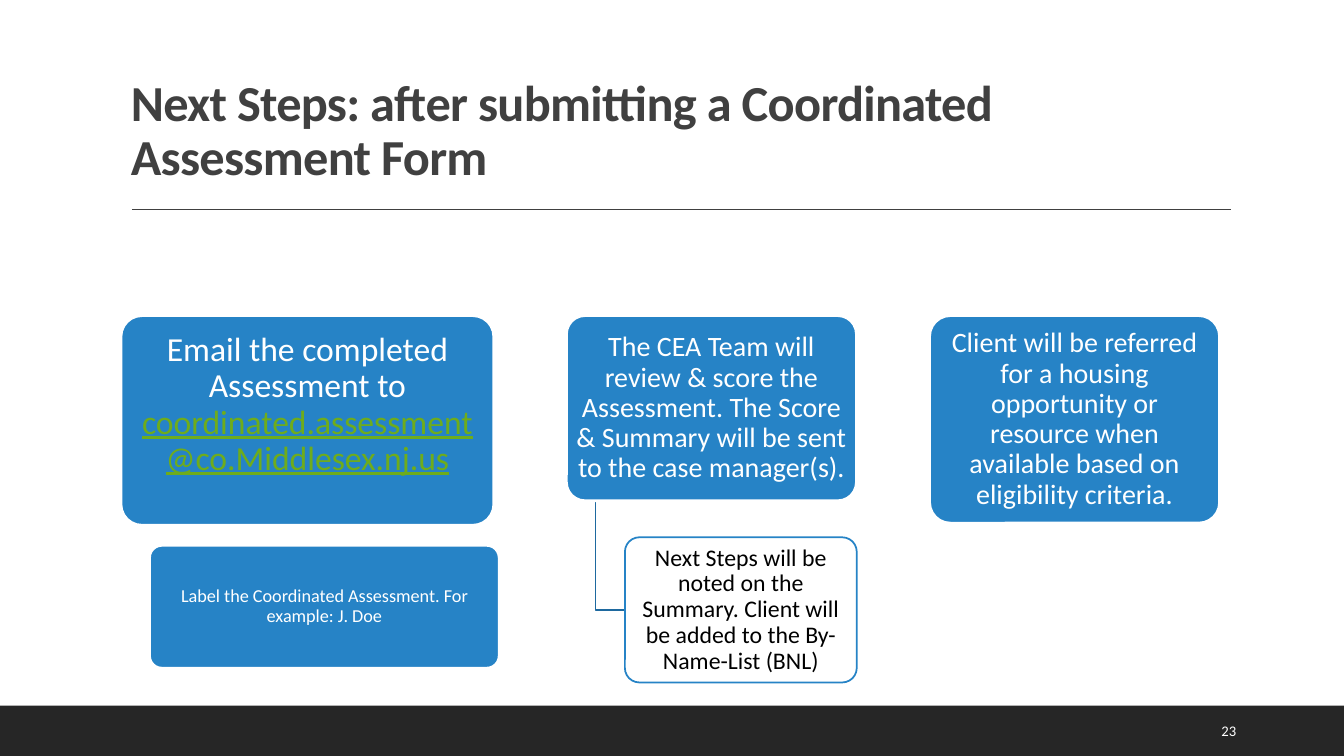
import dataclasses
import typing

import lxml.etree
import pptx
import pptx.dml.color
import pptx.enum.shapes
import pptx.enum.text
import pptx.oxml.ns
import pptx.util

Pt = pptx.util.Pt
ANCHOR = pptx.enum.text.MSO_ANCHOR
ALIGN = pptx.enum.text.PP_ALIGN
SHAPE = pptx.enum.shapes.MSO_SHAPE

BLUE, WHITE, GREY, GREEN = "2683C6", "FFFFFF", "404040", "6EAC1C"
TOP = 225.4  # shared top of the three step cards
SIDE = 2.5  # left and right inset of card text


@dataclasses.dataclass
class Card:
    text: str
    left: float
    top: float
    width: float
    height: float
    size: float
    fill: str = BLUE
    edge: str = WHITE
    weight: float = 2
    ink: str = WHITE
    mail: str = ""
    foot: float = 6  # bottom inset


EMAIL = Card("Email the completed Assessment to ", 86.4, TOP, 266.4, 149.8, 24,
             mail="coordinated.assessment@co.Middlesex.nj.us", foot=28)
REVIEW = Card("The CEA Team will review & score the Assessment. The Score & Summary "
              "will be sent to the case manager(s).", 404.6, TOP, 207.2, 132.3, 20)
REFER = Card("Client will be referred for a housing opportunity or resource when "
             "available based on eligibility criteria.", 664, TOP, 207.2, 148.3, 20)
NOTE = Card("Next Steps will be noted on the Summary. Client will be added to the "
            "By-Name-List (BNL)", 446.4, 383.8, 165.6, 103.7, 17,
            fill=WHITE, edge=BLUE, weight=1.25, ink="000000")
LABEL = Card("Label the Coordinated Assessment. For example: J. Doe",
             106.8, 389.5, 249.8, 87.8, 13)


def tint(code: str) -> pptx.dml.color.RGBColor:
    return pptx.dml.color.RGBColor.from_string(code)


def apply(target: typing.Any, values: dict[str, typing.Any]) -> None:
    for name, value in values.items():
        setattr(target, name, value)


def paint(shape: typing.Any, fill: str) -> None:
    shape.shadow.inherit = False
    shape.fill.solid()
    shape.fill.fore_color.rgb = tint(fill)


def edge(shape: typing.Any, code: str, weight: float) -> None:
    shape.line.color.rgb = tint(code)
    shape.line.width = Pt(weight)


def add_run(para: typing.Any, text: str, size: float, ink: str, **style: typing.Any) -> typing.Any:
    run = para.add_run()
    run.text = text
    apply(run.font, {"name": "Calibri", "size": Pt(size), **style})
    run.font.color.rgb = tint(ink)
    return run


def add_box(slide: typing.Any, box: tuple[float, ...], anchor: ANCHOR) -> typing.Any:
    """Add a wrapping text box and return its first paragraph."""
    frame = slide.shapes.add_textbox(*map(Pt, box)).text_frame
    apply(frame, {"word_wrap": True, "vertical_anchor": anchor})
    return frame.paragraphs[0]


def add_card(slide: typing.Any, card: Card) -> None:
    box = map(Pt, (card.left, card.top, card.width, card.height))
    shape = slide.shapes.add_shape(SHAPE.ROUNDED_RECTANGLE, *box)
    shape.adjustments[0] = 0.1
    paint(shape, card.fill)
    edge(shape, card.edge, card.weight)
    frame = shape.text_frame
    apply(frame, {"word_wrap": True, "vertical_anchor": ANCHOR.MIDDLE,
                  "margin_left": Pt(SIDE), "margin_right": Pt(SIDE),
                  "margin_top": Pt(6), "margin_bottom": Pt(card.foot)})
    para = frame.paragraphs[0]
    apply(para, {"alignment": ALIGN.CENTER, "line_spacing": 0.9})
    add_run(para, card.text, card.size, card.ink)
    if card.mail:
        add_run(para, card.mail, card.size, GREEN, underline=True)


def add_rule(slide: typing.Any) -> None:
    ends = map(Pt, (94.3, 149.5, 879.1, 149.5))
    rule = slide.shapes.add_connector(pptx.enum.shapes.MSO_CONNECTOR.STRAIGHT, *ends)
    edge(rule, GREY, 1)
    lxml.etree.SubElement(rule.element.spPr, pptx.oxml.ns.qn("a:effectLst"))


def add_elbow(slide: typing.Any, start: Card, end: Card) -> None:
    """Join the bottom of one card to the left side of another."""
    stem = Pt(start.left + start.width / 10)
    mid = Pt(end.top + end.height / 2)
    form = slide.shapes.build_freeform(stem, Pt(start.top + start.height))
    form.add_line_segments([(stem, mid), (Pt(end.left), mid)], close=False)
    elbow = form.convert_to_shape()
    elbow.shadow.inherit = False
    elbow.fill.background()
    edge(elbow, "1E699F", 1.25)


def main() -> None:
    deck = pptx.Presentation()
    apply(deck, {"slide_width": Pt(960), "slide_height": Pt(540)})
    slide = deck.slides.add_slide(deck.slide_layouts[6])

    band = slide.shapes.add_shape(SHAPE.RECTANGLE, *map(Pt, (0, 504, 960, 36)))
    paint(band, "262626")
    band.line.fill.background()
    add_rule(slide)

    title = add_box(slide, (86.4, 22.3, 792, 114.5), ANCHOR.BOTTOM)
    title.line_spacing = 0.9
    run = add_run(title, "Next Steps: after submitting a Coordinated Assessment Form",
                  36, GREY, bold=True)
    run.font._element.set("spc", "-50")
    page = add_box(slide, (865.4, 507.6, 61.2, 28.8), ANCHOR.MIDDLE)
    add_run(page, "23", 10.5, WHITE)

    add_elbow(slide, REVIEW, NOTE)
    for card in (EMAIL, REVIEW, NOTE, REFER, LABEL):
        add_card(slide, card)
    deck.save("out.pptx")


if __name__ == "__main__":
    main()
